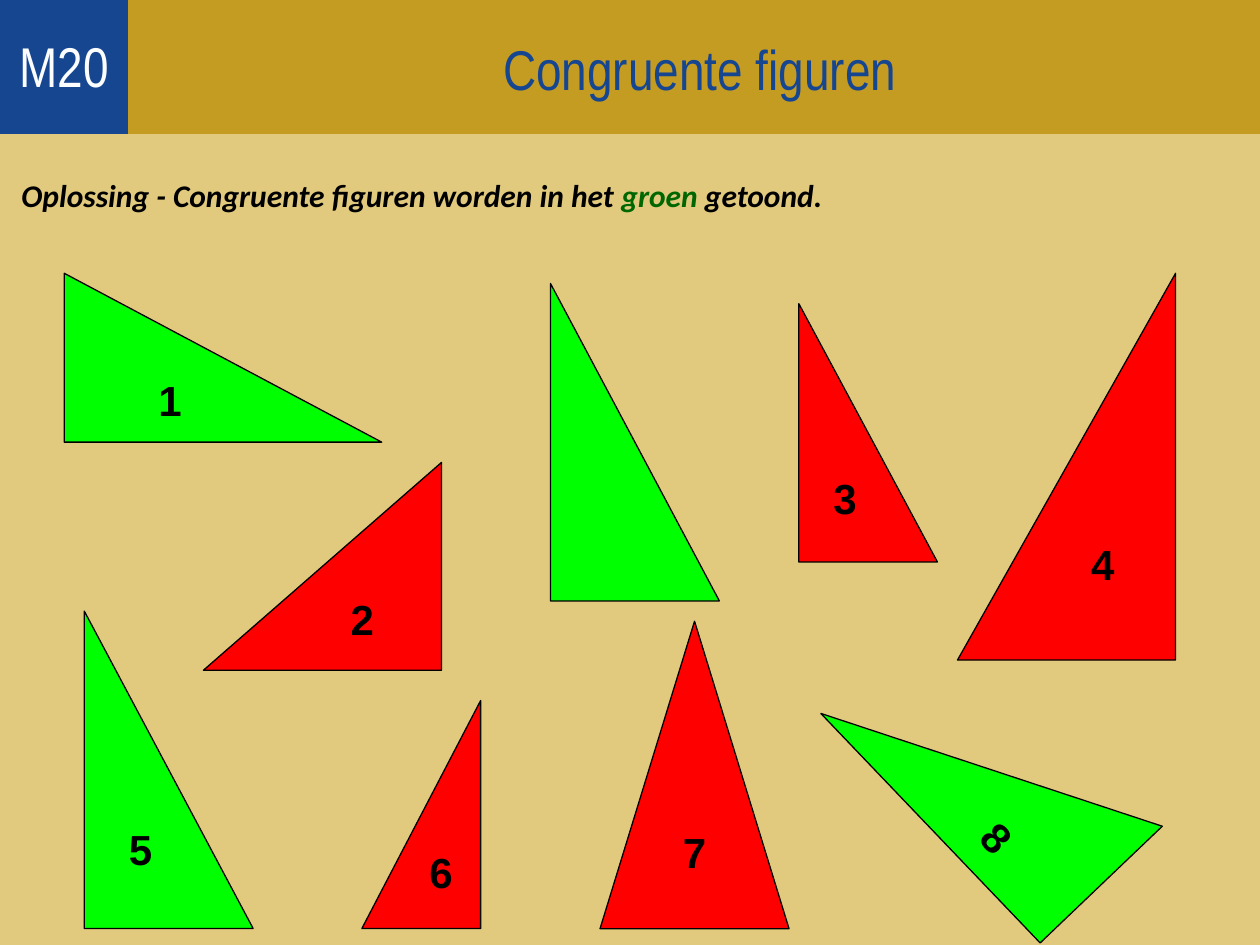
from dataclasses import dataclass

import pptx
import pptx.dml.color
import pptx.enum.shapes
import pptx.enum.text
import pptx.util

Pt = pptx.util.Pt
RGBColor = pptx.dml.color.RGBColor
Shape = pptx.enum.shapes.MSO_SHAPE
Align = pptx.enum.text.PP_ALIGN
Anchor = pptx.enum.text.MSO_ANCHOR

SAND = RGBColor(0xE1, 0xCA, 0x7D)
GOLD = RGBColor(0xC5, 0x9C, 0x22)
BLUE = RGBColor(0x17, 0x46, 0x91)
WHITE = RGBColor(0xFC, 0xFD, 0xFE)
BLACK = RGBColor(0, 0, 0)
DARK_GREEN = RGBColor(0, 0x66, 0)
GREEN = RGBColor(0, 0xFF, 0)
RED = RGBColor(0xFF, 0, 0)

# Legs shared by all congruent triangles
SHORT, LONG = 96.5, 181.4


@dataclass(frozen=True)
class Triangle:
    label: str
    left: float
    top: float
    width: float
    height: float
    color: RGBColor = RED
    kind: Shape = Shape.RIGHT_TRIANGLE
    flip: str = ""
    rotation: float = 0


@dataclass(frozen=True)
class Banner:
    text: str
    width: float
    fill: RGBColor
    color: RGBColor
    inset_left: float = 7.2
    inset_top: float = 3.6


TRIANGLES = [
    Triangle("", 314.6, 162, SHORT, LONG, GREEN),
    Triangle("5", 48.2, 349.2, SHORT, LONG, GREEN),
    Triangle("4", 547.2, 156.2, 124.6, 221, flip="flipH"),
    Triangle("3", 456.5, 173.5, 79.2, 147.6),
    Triangle("1", 36.7, 156.2, LONG, SHORT, GREEN),
    Triangle("7", 342.9, 355, 108, 175.7, kind=Shape.ISOSCELES_TRIANGLE),
    Triangle("6", 206.8, 400.3, 67.9, 130.3, flip="flipH"),
    Triangle("8", 475.9, 391.7, LONG, SHORT, GREEN, flip="flipV", rotation=226.3),
    Triangle("2", 116.2, 264.2, 136.1, 118.8, flip="flipV", rotation=180),
]
BANNERS = [
    Banner("Congruente figuren", 720, GOLD, BLUE, 87.2, 7),
    Banner("M20", 73.2, BLUE, WHITE),
]
HEADING = [
    ("Oplossing - Congruente figuren worden in het ", BLACK),
    ("groen", DARK_GREEN),
    (" getoond.", BLACK),
]


def add_span(para, text: str, font: str, size: float, color: RGBColor,
             bold: bool = False, italic: bool = False) -> None:
    span = para.add_run()
    span.text = text
    span.font.name = font
    span.font.size = Pt(size)
    span.font.color.rgb = color
    span.font.bold = bold
    span.font.italic = italic


def add_filled(page, kind: Shape, left: float, top: float, width: float,
               height: float, fill: RGBColor):
    """Add a flat shape whose text is centred both ways."""
    box = page.shapes.add_shape(kind, Pt(left), Pt(top), Pt(width), Pt(height))
    box.shadow.inherit = False
    box.fill.solid()
    box.fill.fore_color.rgb = fill
    box.text_frame.vertical_anchor = Anchor.MIDDLE
    box.text_frame.paragraphs[0].alignment = Align.CENTER
    return box


def add_triangle(page, item: Triangle) -> None:
    box = add_filled(page, item.kind, item.left, item.top, item.width,
                     item.height, item.color)
    box.line.color.rgb = BLACK
    box.line.width = Pt(0.75)
    box.rotation = item.rotation
    if item.flip:
        box.element.spPr.xfrm.set(item.flip, "1")
    box.text_frame.word_wrap = False
    if item.label:
        add_span(box.text_frame.paragraphs[0], item.label, "Arial", 24, BLACK, bold=True)


def add_banner(page, item: Banner) -> None:
    box = add_filled(page, Shape.RECTANGLE, 0, -2, item.width, 78.5, item.fill)
    box.line.fill.background()
    frame = box.text_frame
    frame.word_wrap = True
    frame.margin_left = Pt(item.inset_left)
    frame.margin_top = Pt(item.inset_top)
    add_span(frame.paragraphs[0], item.text, "Arial Narrow", 32, item.color)


def add_heading(page) -> None:
    box = page.shapes.add_textbox(Pt(5.2), Pt(94.5), Pt(590), Pt(34))
    box.text_frame.word_wrap = True
    box.text_frame.vertical_anchor = Anchor.MIDDLE
    for text, color in HEADING:
        add_span(box.text_frame.paragraphs[0], text, "Calibri", 18, color,
                 bold=True, italic=True)


def main() -> None:
    deck = pptx.Presentation()
    deck.slide_width, deck.slide_height = Pt(720), Pt(540)
    page = deck.slides.add_slide(deck.slide_layouts[6])
    page.background.fill.solid()
    page.background.fill.fore_color.rgb = SAND
    add_heading(page)
    for triangle in TRIANGLES:
        add_triangle(page, triangle)
    for banner in BANNERS:
        add_banner(page, banner)
    deck.save("out.pptx")


if __name__ == "__main__":
    main()
